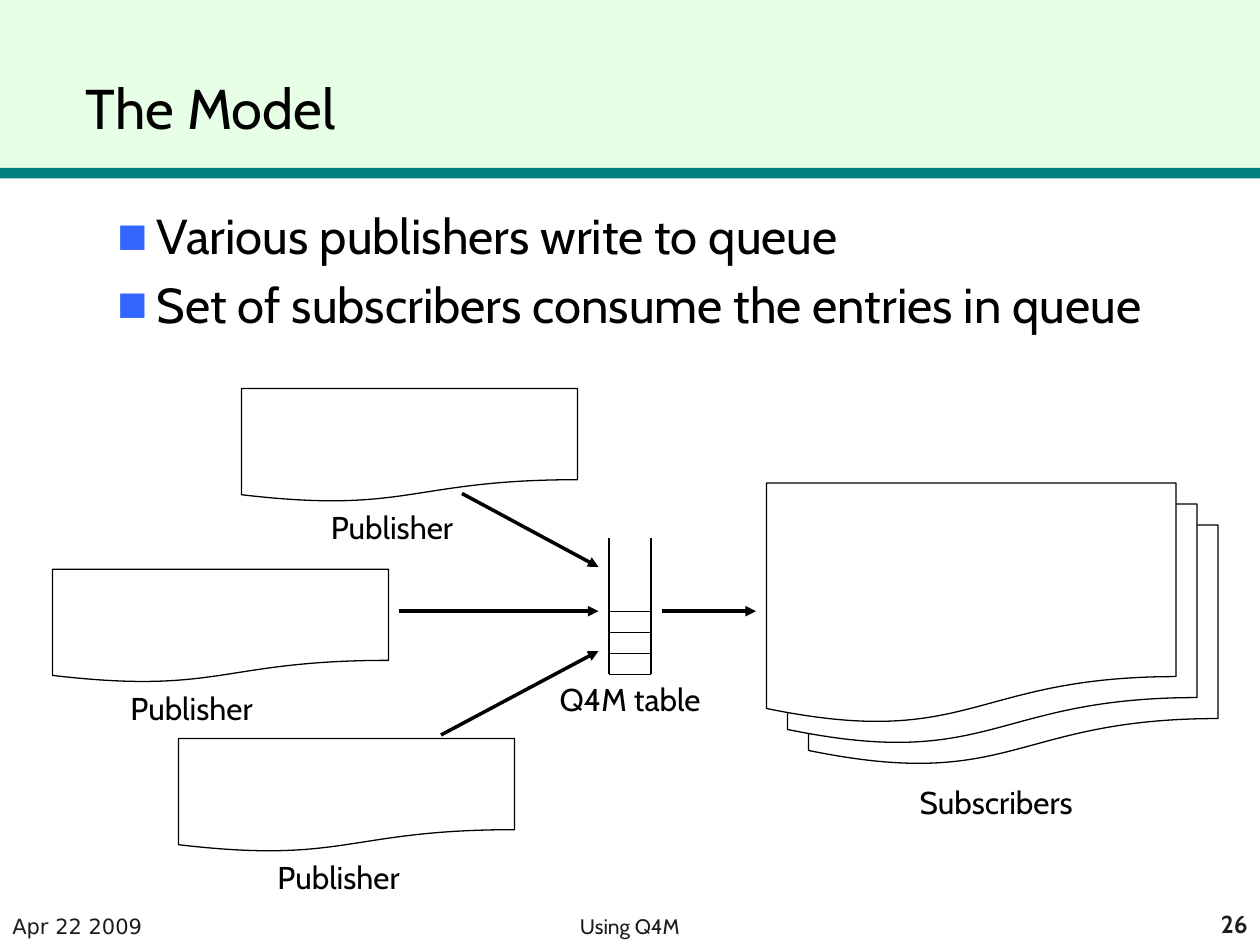
import pptx
import pptx.dml.color
import pptx.enum.shapes
import pptx.enum.text
import pptx.oxml.ns
import pptx.util
from lxml import etree

Pt = pptx.util.Pt
RGBColor = pptx.dml.color.RGBColor
Preset = pptx.enum.shapes.MSO_SHAPE
Align = pptx.enum.text.PP_ALIGN
Anchor = pptx.enum.text.MSO_ANCHOR
qn = pptx.oxml.ns.qn

BLACK = RGBColor(0x00, 0x00, 0x00)
WHITE = RGBColor(0xFF, 0xFF, 0xFF)
DARK_GRAY = RGBColor(0x1C, 0x1C, 0x1C)
PALE_GREEN = RGBColor(0xE7, 0xFF, 0xE7)
TEAL = RGBColor(0x00, 0x80, 0x80)
BULLET_BLUE = RGBColor(0x33, 0x66, 0xFF)


class SlideBuilder:
    font = "Cabin"
    thin = 0.75
    thick = 2

    def __init__(self, slide):
        self.slide = slide

    def shape(self, preset, left, top, width, height, fill):
        shape = self.slide.shapes.add_shape(
            preset, Pt(left), Pt(top), Pt(width), Pt(height))
        shape.shadow.inherit = False
        shape.fill.solid()
        shape.fill.fore_color.rgb = fill
        return shape

    def band(self, top, height, color):
        shape = self.shape(Preset.RECTANGLE, 0, top, 720, height, color)
        shape.line.fill.background()

    def document(self, left, top, width, height):
        shape = self.shape(Preset.FLOWCHART_DOCUMENT, left, top, width, height, WHITE)
        shape.line.color.rgb = BLACK
        shape.line.width = Pt(self.thin)

    def line(self, start, end, arrow=False):
        connector = self.slide.shapes.add_connector(
            pptx.enum.shapes.MSO_CONNECTOR.STRAIGHT, *map(Pt, start + end))
        connector.line.color.rgb = BLACK
        connector.line.width = Pt(self.thick if arrow else self.thin)
        properties = connector._element.spPr
        if arrow:
            etree.SubElement(properties.find(qn("a:ln")), qn("a:tailEnd"), type="triangle")
        etree.SubElement(properties, qn("a:effectLst"))

    def text(self, lines, left, top, width, height, size, color=BLACK, font=None,
             bold=False, align=Align.LEFT, anchor=Anchor.TOP, wrap=True, bullets=False):
        box = self.slide.shapes.add_textbox(Pt(left), Pt(top), Pt(width), Pt(height))
        frame = box.text_frame
        frame.word_wrap = wrap
        frame.vertical_anchor = anchor
        for index, words in enumerate(lines):
            paragraph = frame.add_paragraph() if index else frame.paragraphs[0]
            paragraph.alignment = align
            if index:
                paragraph.space_before = Pt(size * 0.2)
            if bullets:
                self.bullet(paragraph)
            run = paragraph.add_run()
            run.text = words
            run.font.name = font or self.font
            run.font.size = Pt(size)
            run.font.bold = bold
            run.font.color.rgb = color

    def bullet(self, paragraph):
        properties = paragraph._p.get_or_add_pPr()
        properties.set("marL", str(Pt(58.5)))
        properties.set("indent", str(-Pt(22.5)))
        color = etree.SubElement(properties, qn("a:buClr"))
        etree.SubElement(color, qn("a:srgbClr"), val=str(BULLET_BLUE))
        etree.SubElement(properties, qn("a:buSzPct"), val="65000")
        etree.SubElement(properties, qn("a:buFont"), typeface="DejaVu Sans")
        etree.SubElement(properties, qn("a:buChar"), char="■")

    def label(self, words, left, top, width):
        self.text([words], left, top, width, 29, 18, align=Align.CENTER, wrap=False)

    def footer(self, words, left, width, size=12, **style):
        self.text([words], left, 516, width, 24, size, DARK_GRAY,
                  anchor=Anchor.BOTTOM, **style)

    def queue(self, left, right, top, rungs):
        bottom = rungs[-1]
        for x in (left, right):
            self.line((x, top), (x, bottom))
        for y in rungs:
            self.line((left, y), (right, y))


def main():
    presentation = pptx.Presentation()
    presentation.slide_width = Pt(720)
    presentation.slide_height = Pt(540)
    builder = SlideBuilder(presentation.slides.add_slide(presentation.slide_layouts[6]))

    builder.band(0, 96, PALE_GREEN)
    builder.band(96, 6, TEAL)
    builder.text(["The Model"], 42, 0, 678, 84, 32, anchor=Anchor.BOTTOM)
    builder.text(["Various publishers write to queue",
                  "Set of subscribers consume the entries in queue"],
                 24, 114, 696, 96, 28, bullets=True)

    builder.footer("Apr 22 2009", 0, 150, font="DejaVu Sans")
    builder.footer("Using Q4M", 72, 576, align=Align.CENTER)
    builder.footer("26", 570, 150, size=14, bold=True, align=Align.RIGHT)

    for offset in (24, 12, 0):
        builder.document(438 + offset, 276 + offset, 234, 138)
    builder.label("Subscribers", 516, 444, 106.5)

    publishers = [(138, 222, 180.5), (30, 325.25, 66), (102, 422, 150)]
    for left, top, label_left in publishers:
        builder.document(left, top, 192, 65)
        builder.label("Publisher", label_left, top + 65, 87)

    builder.queue(348, 372, 307.5, [349.25 + 12 * step for step in range(4)])
    builder.label("Q4M table", 312, 385.25, 96)

    arrows = [((264, 282), (342, 324)),
              ((228, 349.25), (342, 349.25)),
              ((252, 420), (342, 372)),
              ((378, 349.25), (432, 349.25))]
    for start, end in arrows:
        builder.line(start, end, arrow=True)

    presentation.save("out.pptx")


if __name__ == "__main__":
    main()
